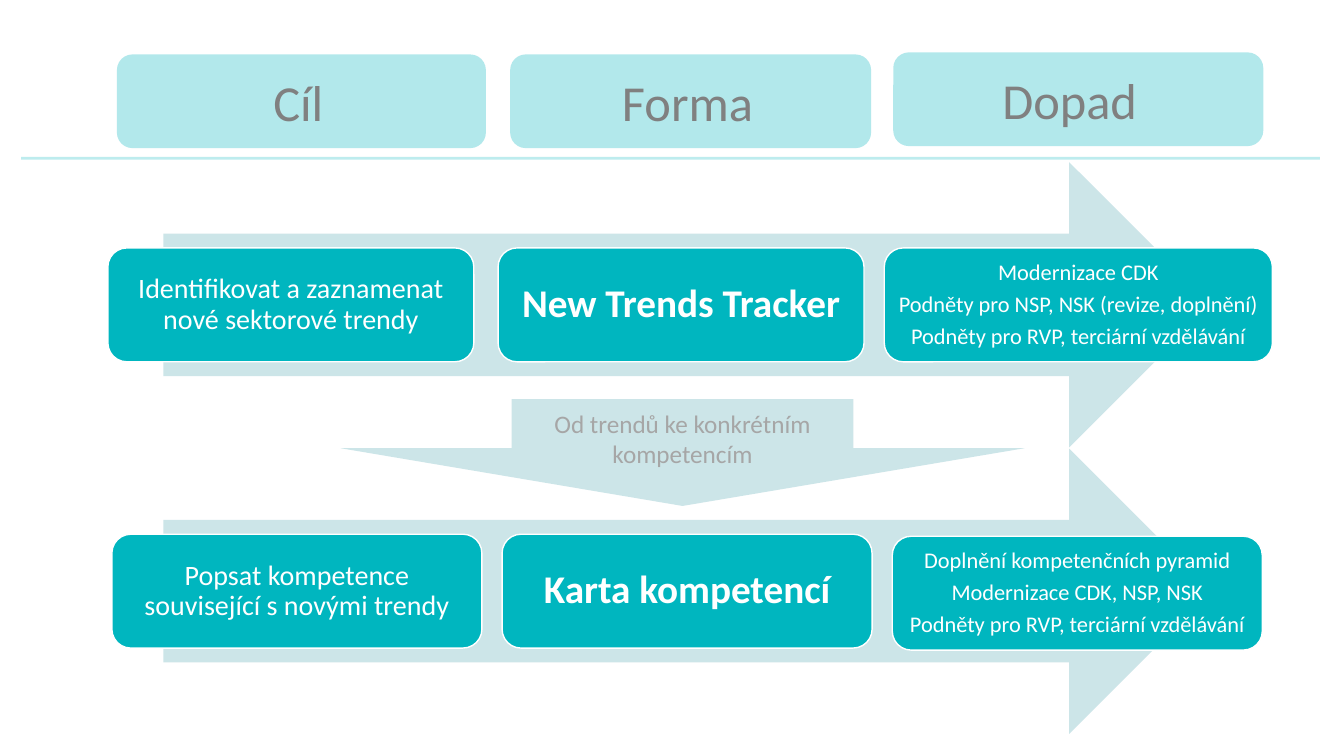
import pptx
import pptx.util
import pptx.dml.color
import pptx.enum.shapes
import pptx.enum.text
import pptx.oxml.ns
import lxml.etree

Inches = pptx.util.Inches
Pt = pptx.util.Pt
RGBColor = pptx.dml.color.RGBColor
SHAPES = pptx.enum.shapes.MSO_SHAPE

TEAL = RGBColor(0x00, 0xB6, 0xBF)
PALE_TEAL = RGBColor(0xCC, 0xE5, 0xE8)
WHITE = RGBColor(0xFF, 0xFF, 0xFF)
GRAY = RGBColor(0x80, 0x80, 0x80)
LIGHT_GRAY = RGBColor(0xA6, 0xA6, 0xA6)

presentation = pptx.Presentation()
presentation.slide_width = Inches(13.33)
presentation.slide_height = Inches(7.5)
slide = presentation.slides.add_slide(presentation.slide_layouts[6])


def add_filled_shape(kind, left, top, width, height, color):
    shape = slide.shapes.add_shape(
        kind, Inches(left), Inches(top), Inches(width), Inches(height))
    shape.shadow.inherit = False
    shape.fill.solid()
    shape.fill.fore_color.rgb = color
    shape.line.fill.background()
    return shape


def write_text(shape, lines, size, color, bold=False):
    frame = shape.text_frame
    frame.word_wrap = True
    frame.vertical_anchor = pptx.enum.text.MSO_ANCHOR.MIDDLE
    for index, line in enumerate(lines):
        paragraph = frame.add_paragraph() if index else frame.paragraphs[0]
        paragraph.alignment = pptx.enum.text.PP_ALIGN.CENTER
        run = paragraph.add_run()
        run.text = line
        run.font.name = "Calibri"
        run.font.size = Pt(size)
        run.font.bold = bold
        run.font.color.rgb = color


headers = [
    ("Cíl", 1.16, 0.54, 3.66, 0.16),
    ("Forma", 5.06, 0.54, 3.58, 0.16),
    ("Dopad", 8.86, 0.52, 3.67, 0.27),
]
translucent = []
for title, left, top, width, right_margin in headers:
    header = add_filled_shape(SHAPES.ROUNDED_RECTANGLE, left, top, width, 0.93, TEAL)
    header.text_frame.margin_right = Inches(right_margin)
    write_text(header, [title], 36, GRAY)
    translucent.append((header, 30))

divider = slide.shapes.add_connector(
    pptx.enum.shapes.MSO_CONNECTOR.STRAIGHT,
    Inches(0.21), Inches(1.57), Inches(13.09), Inches(1.57))
divider.line.width = Pt(2)
divider.line.color.rgb = TEAL
lxml.etree.SubElement(divider._element.spPr, pptx.oxml.ns.qn("a:effectLst"))
translucent.append((divider, 25))

for shape, opacity in translucent:
    color_element = shape._element.spPr.find(".//" + pptx.oxml.ns.qn("a:srgbClr"))
    alpha = lxml.etree.SubElement(color_element, pptx.oxml.ns.qn("a:alpha"))
    alpha.set("val", str(opacity * 1000))

text_styles = [(20, False, 0.08), (28, True, 0.12), (16, False, 0.07)]
rows = [
    (1.61, [
        (1.07, 2.46, 3.63, ["Identifikovat a zaznamenat nové sektorové trendy"]),
        (4.94, 2.46, 3.63, ["New Trends Tracker"]),
        (8.77, 2.46, 3.85, ["Modernizace CDK",
                            "Podněty pro NSP, NSK (revize, doplnění)",
                            "Podněty pro RVP, terciární vzdělávání"]),
    ]),
    (4.45, [
        (1.11, 5.3, 3.67, ["Popsat kompetence související s novými trendy"]),
        (4.98, 5.3, 3.67, ["Karta kompetencí"]),
        (8.85, 5.32, 3.67, ["Doplnění kompetenčních pyramid",
                            "Modernizace CDK, NSP, NSK",
                            "Podněty pro RVP, terciární vzdělávání"]),
    ]),
]
for arrow_top, cards in rows:
    add_filled_shape(SHAPES.RIGHT_ARROW, 1.62, arrow_top, 10.4, 2.83, PALE_TEAL)
    for (left, top, width, lines), (size, bold, margin) in zip(cards, text_styles):
        card = add_filled_shape(SHAPES.ROUNDED_RECTANGLE, left, top, width, 1.13, TEAL)
        card.line.color.rgb = WHITE
        card.line.width = Pt(1)
        frame = card.text_frame
        frame.margin_left = frame.margin_right = Inches(margin)
        frame.margin_top = frame.margin_bottom = Inches(margin)
        write_text(card, lines, size, WHITE, bold)
        for paragraph in frame.paragraphs:
            paragraph.line_spacing = 0.9
            paragraph.space_after = Pt(size * 0.35)

transition = add_filled_shape(SHAPES.DOWN_ARROW, 3.38, 3.96, 6.78, 1.06, PALE_TEAL)
transition.adjustments[0] = 0.5
transition.adjustments[1] = 0.54
write_text(transition, ["Od trendů ke konkrétním kompetencím"], 18, LIGHT_GRAY)

presentation.save("out.pptx")
